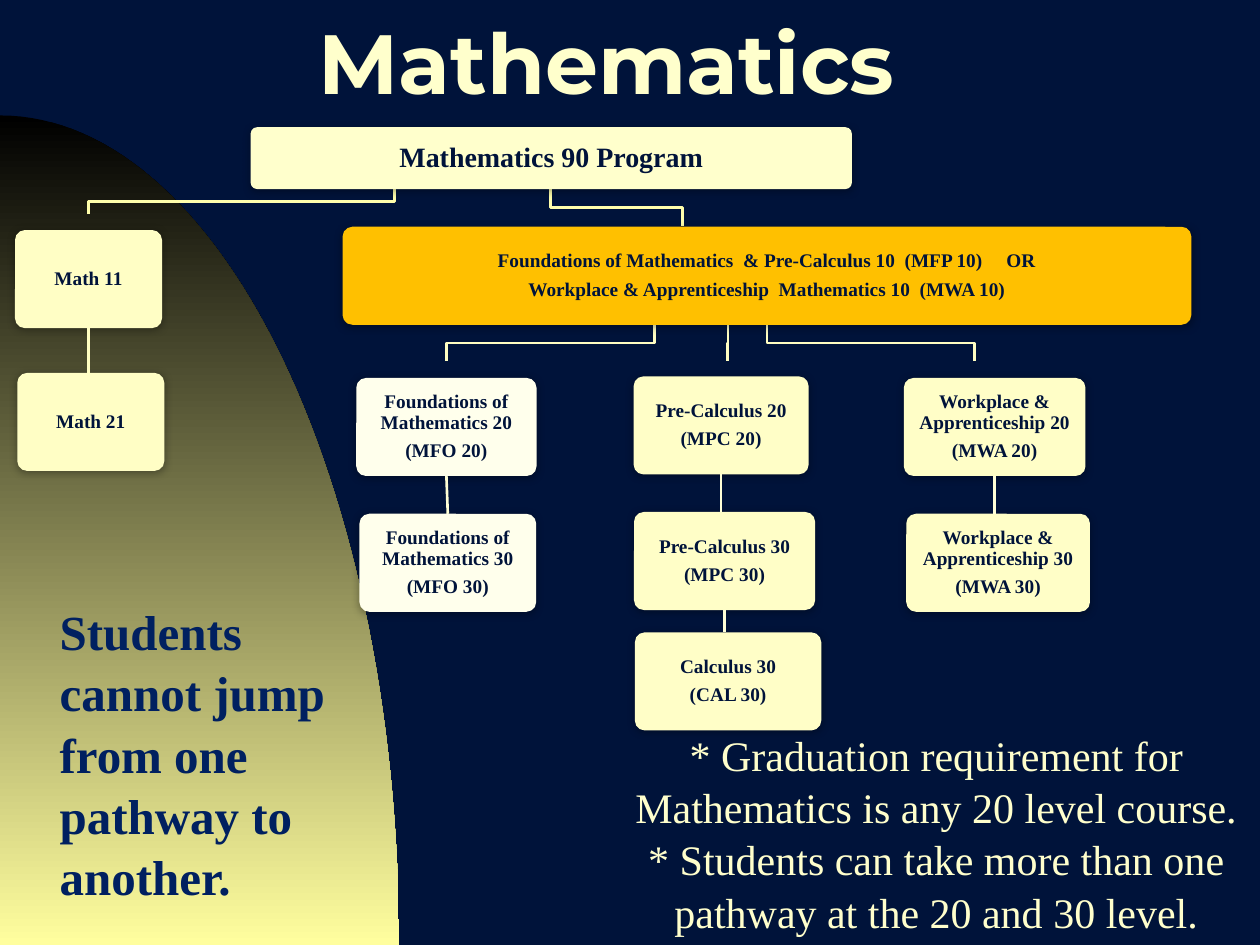
from math import cos, pi, sin

from lxml.etree import SubElement
from pptx import Presentation
from pptx.dml.color import RGBColor
from pptx.enum.shapes import MSO_CONNECTOR, MSO_SHAPE
from pptx.enum.text import MSO_ANCHOR, PP_ALIGN
from pptx.oxml.ns import qn
from pptx.util import Pt

SERIF = "Times New Roman"
NAVY, CREAM, PALE, IVORY, AMBER = "00133A", "FFFFCC", "FFFEC7", "FFFFEC", "FFC000"
LINK_PALE, LINK_LIGHT, LINK_TOP = "FFFEC2", "FFFFD6", "FFFEAB"

# Courses: left, top, width, height, fill, text size, lines
COURSES = {
    "Math 90": (143.3, 72.7, 343.5, 35.3, CREAM, 16, ["Mathematics 90 Program"]),
    "Math 11": (8.6, 131.5, 84, 56, "FFFEC5", 11, ["Math 11"]),
    "Math 21": (9.9, 213.1, 84, 56, "FFFEC5", 11, ["Math 21"]),
    "Level 10": (195.8, 129.6, 485, 56, AMBER, 11, [
        "Foundations of Mathematics\u00a0 & Pre-Calculus 10\u00a0 (MFP 10)\u00a0 \u00a0 \u00a0OR",
        "Workplace & Apprenticeship  Mathematics 10  (MWA 10)"]),
    "MFO 20": (203.6, 216, 103, 56, IVORY, 11, ["Foundations of Mathematics 20", "(MFO 20)"]),
    "MFO 30": (205.4, 293.6, 101, 56, IVORY, 11, ["Foundations of Mathematics 30", "(MFO 30)"]),
    "MPC 20": (362.1, 215.1, 100, 56, PALE, 11, ["Pre-Calculus 20", "(MPC 20)"]),
    "MPC 30": (362.3, 292.6, 103.5, 56, PALE, 11, ["Pre-Calculus 30", "(MPC 30)"]),
    "CAL 30": (362.8, 361.4, 106.5, 56, PALE, 11, ["Calculus 30", "(CAL 30)"]),
    "MWA 20": (516.5, 216, 103.8, 56, PALE, 11, ["Workplace & Apprenticeship 20", "(MWA 20)"]),
    "MWA 30": (517.9, 293.6, 105, 56, PALE, 11, ["Workplace & Apprenticeship 30", "(MWA 30)"]),
}
# Straight links from a course to the one below it
LINKS = [
    ("Math 11", "Math 21", LINK_PALE),
    ("MFO 20", "MFO 30", LINK_LIGHT),
    ("MPC 20", "MPC 30", LINK_LIGHT),
    ("MPC 30", "CAL 30", LINK_LIGHT),
    ("MWA 20", "MWA 30", LINK_LIGHT),
]
# Branches: start x, start y, turn y, end x, end y, colour
BRANCHES = [
    (225.4, 108, 115.2, 50.5, 122.2, LINK_TOP),
    (314.6, 108, 118.6, 390, 129.2, LINK_TOP),
    (374.2, 185.6, 196, 255.1, 206.4, LINK_PALE),
    (416, 185.6, 196, 415.6, 206.4, LINK_PALE),
    (438.3, 185.6, 196, 556.7, 206.4, LINK_PALE),
]
TITLE = "Mathematics"
NOTES = ["* Graduation requirement for Mathematics is any 20 level course.",
         "* Students can take more than one pathway at the 20 and 30 level."]
WARNING = "Students cannot jump from one pathway to another."
DOME_WIDTH, DOME_TOP, SLIDE_BOTTOM = 228, 66, 540


def rgb(color):
    return RGBColor.from_string(color)


def add_run(paragraph, text, size, color, font=SERIF, bold=True):
    run = paragraph.add_run()
    run.text = text
    run.font.name, run.font.size, run.font.bold = font, Pt(size), bold
    run.font.color.rgb = rgb(color)


def add_paragraphs(frame, lines):
    for index, line in enumerate(lines):
        yield (frame.add_paragraph() if index else frame.paragraphs[0]), line


def add_text_box(left, top, width, height):
    frame = slide.shapes.add_textbox(Pt(left), Pt(top), Pt(width), Pt(height)).text_frame
    frame.word_wrap = True
    return frame


def draw_outline(points, close):
    (x, y), *rest = [(Pt(x), Pt(y)) for x, y in points]
    builder = slide.shapes.build_freeform(x, y)
    builder.add_line_segments(rest, close=close)
    outline = builder.convert_to_shape()
    outline.shadow.inherit = False
    return outline


def add_course(left, top, width, height, fill, size, lines):
    course = slide.shapes.add_shape(
        MSO_SHAPE.ROUNDED_RECTANGLE, Pt(left), Pt(top), Pt(width), Pt(height))
    course.adjustments[0] = 0.1
    course.fill.solid()
    course.fill.fore_color.rgb = rgb(fill)
    course.line.fill.background()
    # Soft shadow just below the box
    course.shadow.inherit = False
    effects = course._element.spPr.find(qn("a:effectLst"))
    shadow = SubElement(effects, qn("a:outerShdw"), blurRad=str(Pt(5)), dist=str(Pt(1)),
                        dir="5400000", rotWithShape="0")
    black = SubElement(shadow, qn("a:srgbClr"), val="000000")
    SubElement(black, qn("a:alpha"), val="32000")

    frame = course.text_frame
    frame.word_wrap = True
    frame.vertical_anchor = MSO_ANCHOR.MIDDLE
    frame.margin_left = frame.margin_right = Pt(5)
    frame.margin_top = frame.margin_bottom = Pt(5)
    for paragraph, line in add_paragraphs(frame, lines):
        paragraph.alignment = PP_ALIGN.CENTER
        paragraph.line_spacing = 0.9
        paragraph.space_after = Pt(round(0.38 * size, 1))
        add_run(paragraph, line, size, NAVY)
    return course


def add_link(upper, lower, color):
    x = upper.left + upper.width // 2
    link = slide.shapes.add_connector(
        MSO_CONNECTOR.STRAIGHT, x, upper.top + upper.height, x, lower.top)
    link.begin_connect(upper, 2)
    if abs(lower.left + lower.width // 2 - x) < Pt(1):
        link.end_connect(lower, 0)
    link.line.color.rgb = rgb(color)
    link.line.width = Pt(1.5)
    SubElement(link._element.spPr, qn("a:effectLst"))


prs = Presentation()
prs.slide_width, prs.slide_height = Pt(720), Pt(SLIDE_BOTTOM)
slide = prs.slides.add_slide(prs.slide_layouts[6])
slide.background.fill.solid()
slide.background.fill.fore_color.rgb = rgb(NAVY)

# Quarter-ellipse dome in the lower left corner
STEPS = 60
angles = [step * pi / 2 / STEPS for step in range(STEPS + 1)]
arc = [(DOME_WIDTH * sin(a), SLIDE_BOTTOM - (SLIDE_BOTTOM - DOME_TOP) * cos(a)) for a in angles]
dome = draw_outline(arc + [(0, SLIDE_BOTTOM)], close=True)
dome.line.fill.background()
dome.fill.gradient()
dome.fill.gradient_angle = 270
for stop, color, position in zip(dome.fill.gradient_stops, ("000000", "FFFE9E"), (0, 1)):
    stop.color.rgb = rgb(color)
    stop.position = position

# Branches, courses and links
for x1, y1, turn, x2, y2, color in BRANCHES:
    branch = draw_outline([(x1, y1), (x1, turn), (x2, turn), (x2, y2)], close=False)
    branch.fill.background()
    branch.line.color.rgb = rgb(color)
    branch.line.width = Pt(1.5)
courses = {key: add_course(*course) for key, course in COURSES.items()}
for upper, lower, color in LINKS:
    add_link(courses[upper], courses[lower], color)

# Title
title = add_text_box(175, -3, 360, 90)
title.vertical_anchor = MSO_ANCHOR.MIDDLE
title.paragraphs[0].line_spacing = 0.7
add_run(title.paragraphs[0], TITLE, 48, CREAM, font="Montserrat")

# Graduation notes
notes = add_text_box(263, 412, 472, 153)
for paragraph, line in add_paragraphs(notes, NOTES):
    paragraph.alignment = PP_ALIGN.CENTER
    paragraph.line_spacing = 1.04
    paragraph._p.get_or_add_pPr().set("marL", str(Pt(72)))
    add_run(paragraph, line, 24, CREAM, bold=False)

# Pathway warning
warning = add_text_box(27, 339, 173, 177)
warning.paragraphs[0].line_spacing = 1.04
add_run(warning.paragraphs[0], WARNING, 28, "002060")

prs.save("out.pptx")
